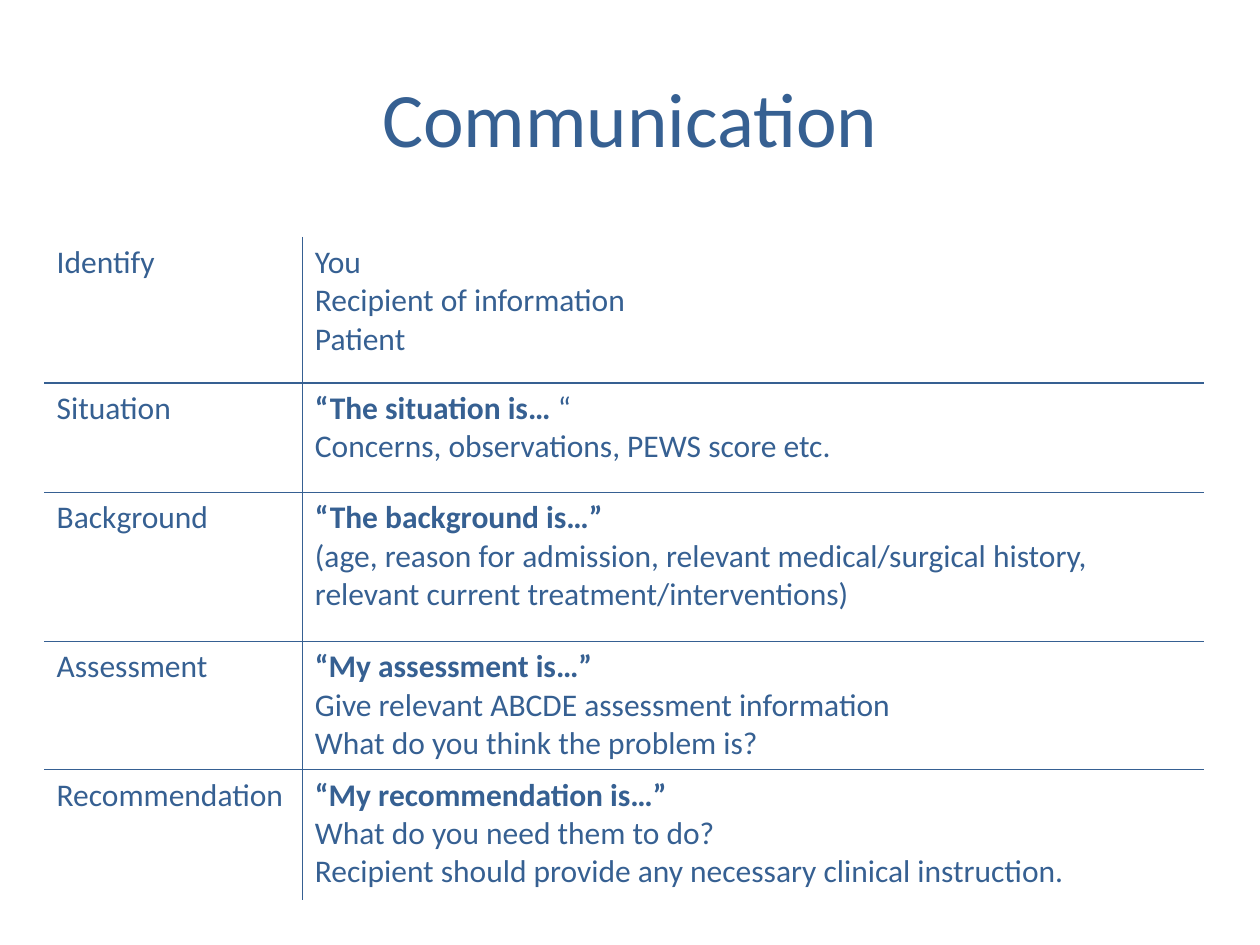
from lxml.etree import SubElement
from pptx import Presentation
from pptx.dml.color import RGBColor
from pptx.enum.text import MSO_ANCHOR, PP_ALIGN
from pptx.oxml.ns import qn
from pptx.util import Inches, Pt

COLORS = {"blue": "366092"}
FONT = "Calibri"
COL_WIDTHS = [2.05, 7.16]
ROWS = [
    ("Identify", 1.16, "", "", ["You", "Recipient of information", "Patient"]),
    ("Situation", 0.87, "“The situation is…", " “",
     ["Concerns, observations, PEWS score etc."]),
    ("Background", 1.18, "“The background is…”", "",
     ["(age, reason for admission, relevant medical/surgical history, "
      "relevant current treatment/interventions)"]),
    ("Assessment", 1.02, "“My assessment is…”", "",
     ["Give relevant ABCDE assessment information",
      "What do you think the problem is?"]),
    ("Recommendation", 1.03, "“My recommendation is…”", "",
     ["What do you need them to do?",
      "Recipient should provide any necessary clinical instruction."]),
]


def style_font(p, size):
    p.font.name = FONT
    p.font.size = Pt(size)
    p.font.color.rgb = RGBColor.from_string(COLORS["blue"])


def add_title(slide, text, left, top, width, height):
    title = slide.shapes.title
    title.left, title.top = Inches(left), Inches(top)
    title.width, title.height = Inches(width), Inches(height)
    tf = title.text_frame
    tf.text = text
    tf.vertical_anchor = MSO_ANCHOR.MIDDLE
    p = tf.paragraphs[0]
    p.alignment = PP_ALIGN.CENTER
    style_font(p, 44)


def set_borders(cell, visible):
    tc_pr = cell._tc.get_or_add_tcPr()
    for side in "LRTB":
        ln = SubElement(tc_pr, qn(f"a:ln{side}"), w=str(Pt(1)))
        if side in visible:
            fill = SubElement(ln, qn("a:solidFill"))
            SubElement(fill, qn("a:srgbClr"), val=COLORS["blue"])
        else:
            SubElement(ln, qn("a:noFill"))


def fill_details(tf, heading, tail, lines):
    tf.text = "\n".join([heading] * bool(heading) + lines)
    if heading:
        p = tf.paragraphs[0]
        p.runs[0].font.bold = True
        if tail:
            p.add_run().text = tail


def add_steps_table(slide, left, top):
    height = sum(row[1] for row in ROWS)
    table = slide.shapes.add_table(
        len(ROWS), len(COL_WIDTHS), Inches(left), Inches(top),
        Inches(sum(COL_WIDTHS)), Inches(height)).table
    table.first_row = table.horz_banding = False
    for column, width in zip(table.columns, COL_WIDTHS):
        column.width = Inches(width)
    for i, (step, row_height, heading, tail, lines) in enumerate(ROWS):
        table.rows[i].height = Inches(row_height)
        label, details = table.cell(i, 0), table.cell(i, 1)
        label.text = step
        fill_details(details.text_frame, heading, tail, lines)
        across = "T" * (i > 0) + "B" * (i < len(ROWS) - 1)
        for cell, inner_side in ((label, "R"), (details, "L")):
            set_borders(cell, across + inner_side)
            cell.fill.background()
            for p in cell.text_frame.paragraphs:
                style_font(p, 18)


def main():
    prs = Presentation()
    prs.slide_width, prs.slide_height = Inches(10), Inches(7.5)
    slide = prs.slides.add_slide(prs.slide_layouts[5])
    add_title(slide, "Communication", 0.5, 0.3, 9, 1.25)
    add_steps_table(slide, 0.35, 1.88)
    prs.save("out.pptx")


if __name__ == "__main__":
    main()
